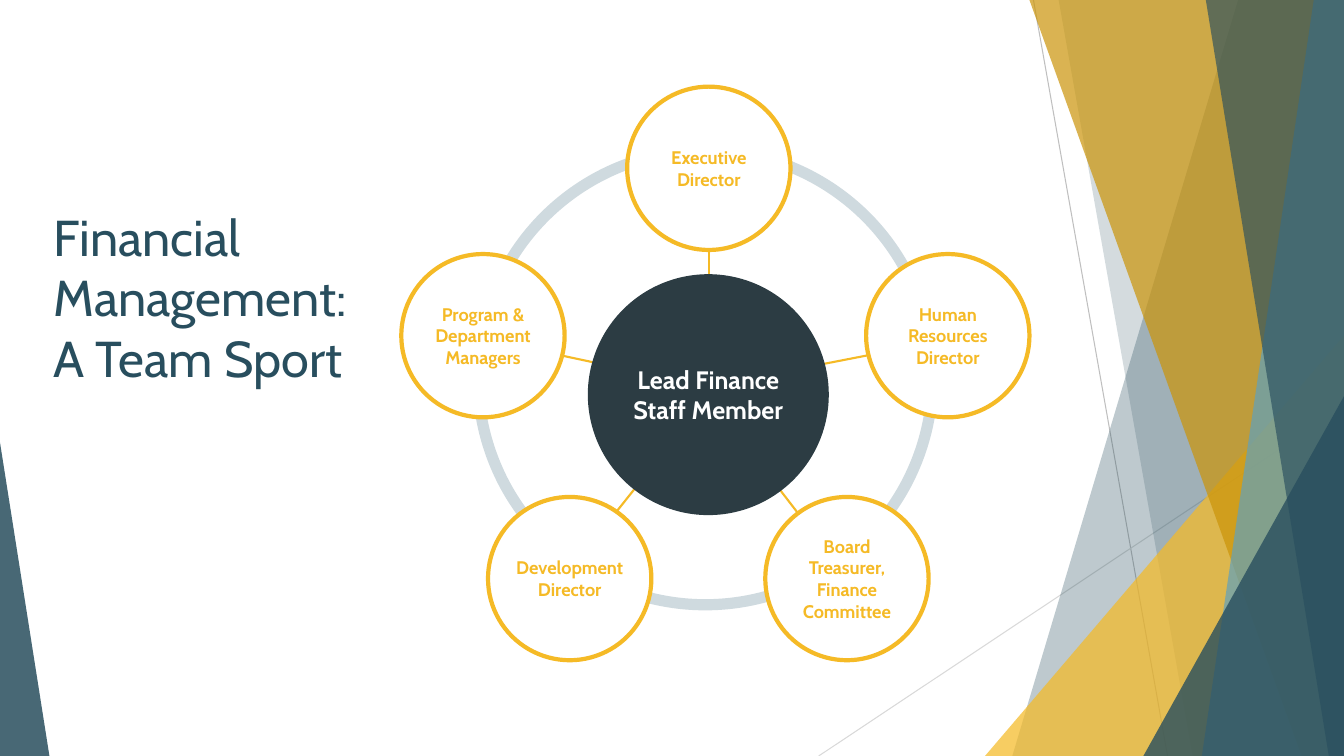
from lxml.etree import SubElement
from pptx import Presentation
from pptx.dml.color import RGBColor
from pptx.enum.shapes import MSO_CONNECTOR, MSO_SHAPE
from pptx.enum.text import MSO_ANCHOR, MSO_AUTO_SIZE, PP_ALIGN
from pptx.oxml.ns import qn
from pptx.util import Inches, Pt

TEAL = RGBColor(0x28, 0x4E, 0x5E)
SKY = RGBColor(0x61, 0xA1, 0xBC)
GOLD = RGBColor(0xF5, 0xBA, 0x26)
OCHRE = RGBColor(0xCB, 0x94, 0x09)
SLATE = RGBColor(0x2C, 0x3C, 0x43)
MIST = RGBColor(0xCF, 0xDA, 0xDF)
GREY = RGBColor(0xBF, 0xBF, 0xBF)
PALE_GREY = RGBColor(0xD9, 0xD9, 0xD9)
WHITE = RGBColor(0xFF, 0xFF, 0xFF)

CELL = Inches(0.1)
COLS, ROWS = 133.3, 75

TITLE_FONT = {"name": "Cabin", "size": Pt(36), "bold": False}
HUB_FONT = {"name": "Cabin", "size": Pt(18), "bold": True}
NODE_FONT = {"name": "Cabin", "size": Pt(13), "bold": True}
TITLE_FRAME = {"word_wrap": True, "auto_size": MSO_AUTO_SIZE.NONE,
               "vertical_anchor": MSO_ANCHOR.TOP}
HUB_FRAME = {"word_wrap": True, "vertical_anchor": MSO_ANCHOR.MIDDLE,
             "margin_left": 0, "margin_right": 0,
             "margin_top": 0, "margin_bottom": 0}
NODE_FRAME = {**HUB_FRAME, "margin_top": Inches(0.05), "margin_bottom": Inches(0.05)}

NODE_SIZE = 16.2
MEMBERS = [
    ("Executive Director", (22.4, 0), (30.5, 6.9), (30.5, 29.8)),
    ("Human Resources Director", (46.1, 16.6), (56.3, 24.7), (30.6, 29.7)),
    ("Board Treasurer, Finance Committee", (36.1, 40.7), (44.5, 49), (30.7, 31.1)),
    ("Development Director", (8.6, 40.7), (16.3, 48.5), (30.7, 30.4)),
    ("Program & Department Managers", (0, 16.6), (7.6, 24.9), (30.1, 29.7)),
]


def cells(*values):
    return [round(v * CELL) for v in values]


def apply(target, values):
    for name, value in values.items():
        setattr(target, name, value)


def paint(sp, fill=None, alpha=100, line=None, width=0):
    sp.shadow.inherit = False
    if fill is None:
        sp.fill.background()
    else:
        sp.fill.solid()
        sp.fill.fore_color.rgb = fill
        if alpha < 100:
            clr = sp.fill._xPr.find(".//" + qn("a:srgbClr"))
            SubElement(clr, qn("a:alpha")).set("val", str(alpha * 1000))
    if line is None:
        sp.line.fill.background()
    else:
        sp.line.color.rgb = line
        sp.line.width = Pt(width)


def add_line(s, start, end, color, width):
    c = s.shapes.add_connector(MSO_CONNECTOR.STRAIGHT, *cells(*start, *end))
    c.line.color.rgb = color
    c.line.width = Pt(width)
    SubElement(c._element.spPr, qn("a:effectLst"))


def add_band(s, box, top_x, bottom_x, color, alpha):
    x, y, w, h = box
    fb = s.shapes.build_freeform(*cells(x + top_x, y), scale=1.0)
    corners = [(x + w, y), (x + w, y + h), (x + bottom_x, y + h)]
    fb.add_line_segments([cells(*corner) for corner in corners], close=True)
    paint(fb.convert_to_shape(), color, alpha)


def add_wedge(s, box, apex, color, alpha):
    sp = s.shapes.add_shape(MSO_SHAPE.ISOSCELES_TRIANGLE, *cells(*box))
    sp.adjustments[0] = apex
    paint(sp, color, alpha)


def add_circle(s, x, y, size, **look):
    sp = s.shapes.add_shape(MSO_SHAPE.OVAL, *cells(x, y, size, size))
    paint(sp, **look)
    return sp


def write(sp, text, frame, font, color, align):
    tf = sp.text_frame
    tf.text = text
    apply(tf, frame)
    p = tf.paragraphs[0]
    p.alignment = align
    for r in p.runs:
        apply(r.font, font)
        r.font.color.rgb = color


def add_facets(s, box):
    x, y, w, h = box
    right, bottom = x + w, y + h
    add_line(s, (x + 21.3, y), (x + 34.6, bottom), GREY, 0.75)
    add_line(s, (right, y + 40.3), (x, bottom), PALE_GREY, 0.75)
    add_band(s, box, 41.6, 19.2, TEAL, 30)
    add_band(s, box, 23.8, 37.1, TEAL, 20)
    add_wedge(s, (right - 35.6, bottom - 41.7, 35.6, 41.7), 1, GOLD, 72)
    add_band(s, box, 20.9, 47.9, OCHRE, 70)
    add_band(s, box, 49.1, 38, SKY, 70)
    add_band(s, box, 38.4, 50.6, TEAL, 65)
    add_wedge(s, (right - 19.9, bottom - 35.7, 19.9, 35.7), 1, TEAL, 80)


def add_title(s, box):
    sp = s.shapes.title
    apply(sp, dict(zip(("left", "top", "width", "height"), cells(*box))))
    write(sp, "Financial Management:\vA Team Sport", TITLE_FRAME, TITLE_FONT,
          TEAL, PP_ALIGN.LEFT)


def add_team_wheel(s, box):
    x, y = box[:2]
    for _, _, start, end in MEMBERS:
        add_line(s, (x + start[0], y + start[1]), (x + end[0], y + end[1]), GOLD, 1.5)
    add_circle(s, x + 7.6, y + 6.3, 45.1, line=MIST, width=8)
    hub = add_circle(s, x + 18.5, y + 18.6, 23.9, fill=SLATE)
    write(hub, "Lead Finance Staff Member", HUB_FRAME, HUB_FONT, WHITE, PP_ALIGN.CENTER)
    for name, (dx, dy), _, _ in MEMBERS:
        node = add_circle(s, x + dx, y + dy, NODE_SIZE, fill=WHITE, line=GOLD, width=3)
        write(node, name, NODE_FRAME, NODE_FONT, GOLD, PP_ALIGN.CENTER)


def main():
    prs = Presentation()
    prs.slide_width, prs.slide_height = cells(COLS, ROWS)
    s = prs.slides.add_slide(prs.slide_layouts[5])
    add_facets(s, (81.2, 0, COLS - 81.2, ROWS))
    add_wedge(s, (0, ROWS - 31.1, 4.9, 31.1), 0, TEAL, 85)
    add_title(s, (4.3, 19.9, 36.1, 45.2))
    add_team_wheel(s, (39.8, 8.6, 62.3, 56.9))
    prs.save("out.pptx")


if __name__ == "__main__":
    main()
